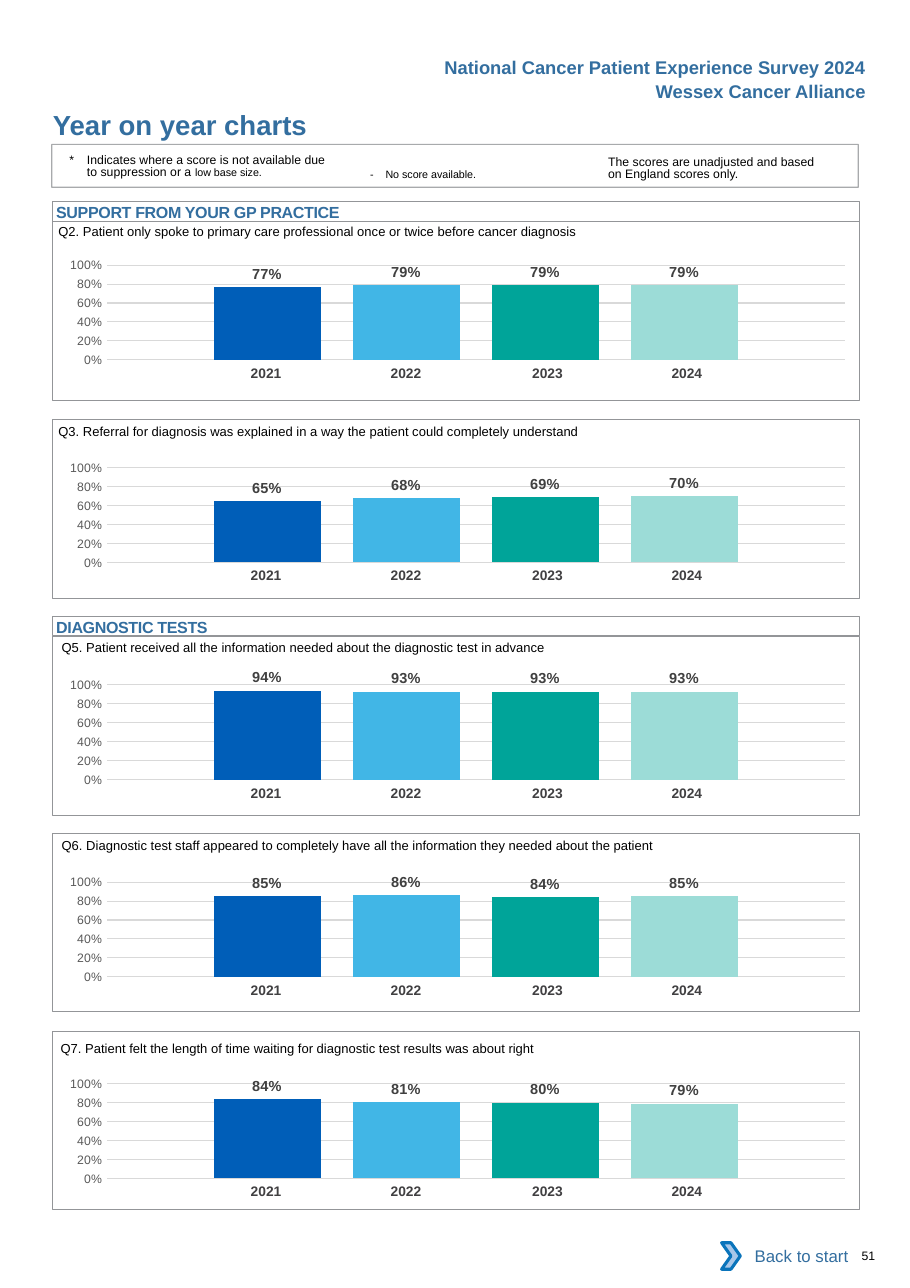
from lxml.etree import SubElement
from pptx import Presentation
from pptx.chart.data import CategoryChartData
from pptx.dml.color import RGBColor
from pptx.enum.chart import XL_CHART_TYPE as CHART, XL_LABEL_POSITION as POS, XL_TICK_MARK as TICK
from pptx.enum.shapes import MSO_SHAPE as SHAPE
from pptx.enum.text import MSO_ANCHOR as ANCHOR, PP_ALIGN as ALIGN
from pptx.oxml import parse_xml
from pptx.oxml.ns import nsdecls, qn
from pptx.util import Inches, Pt

rgb = RGBColor.from_string
BLUE, GREY = "336E9F", "939598"
BAR_COLORS = ["005EB8", "41B6E6", "00A499", "9CDCD7"]
YEARS = ["2021", "2022", "2023", "2024"]
LEFT, WIDTH = 0.48, 7.32

prs = Presentation()
prs.slide_width, prs.slide_height = Inches(8.26), Inches(11.69)
s = prs.slides.add_slide(prs.slide_layouts[6])


def write(sp, text, size, color="000000", bold=False, align=ALIGN.LEFT,
          anchor=ANCHOR.TOP, inset=(0, 0, 0, 0)):
    tf = sp.text_frame
    tf.word_wrap, tf.vertical_anchor = True, anchor
    tf.margin_left, tf.margin_top, tf.margin_right, tf.margin_bottom = map(Inches, inset)
    p = tf.paragraphs[0]
    p.text, p.alignment = text, align
    p.font.name, p.font.size, p.font.bold = "Arial", Pt(size), bold
    p.font.color.rgb = rgb(color)
    return p


def add_shape(kind, left, top, width, height, fill=None, line=None, weight=0.5):
    sp = s.shapes.add_shape(kind, *map(Inches, (left, top, width, height)))
    sp.shadow.inherit = False
    if fill:
        sp.fill.solid()
        sp.fill.fore_color.rgb = rgb(fill)
    else:
        sp.fill.background()
    if line:
        sp.line.color.rgb = rgb(line)
        sp.line.width = Pt(weight)
    else:
        sp.line.fill.background()
    return sp


# Header and page title
for top, text in [(0.46, "National Cancer Patient Experience Survey 2024"),
                  (0.68, "Wessex Cancer Alliance")]:
    tb = s.shapes.add_textbox(Inches(3.36), Inches(top), Inches(4.5), Inches(0.3))
    write(tb, text, 12, BLUE, True, ALIGN.RIGHT, inset=(0, 0.05, 0, 0))
tb = s.shapes.add_textbox(Inches(LEFT), Inches(0.98), Inches(4.5), Inches(0.3))
write(tb, "Year on year charts", 18, BLUE, True)

# Notes box: text, left, top, width, hanging indent, size
frame = add_shape(SHAPE.RECTANGLE, 0.47, 1.31, WIDTH, 0.39, line=GREY, weight=0.75)
SubElement(frame.line.fill.fore_color._xFill.find(qn("a:srgbClr")), qn("a:alpha"), val="80000")
notes = [
    ("*\tIndicates where a score is not available due to suppression or a ",
     0.63, 1.4, 2.4, 0.16, 8),
    ("-\tNo score available.", 3.36, 1.53, 1.5, 0.14, 7),
    ("The scores are unadjusted and based on England scores only.",
     5.52, 1.42, 1.95, 0, 8),
]
for text, left, top, width, indent, size in notes:
    tb = s.shapes.add_textbox(*map(Inches, (left, top, width, 0.24)))
    p = write(tb, text, size)
    p.line_spacing = Pt(8.1)
    pPr = p._p.get_or_add_pPr()
    pPr.set("marL", str(Inches(indent)))
    pPr.set("indent", str(-Inches(indent)))
    if text.startswith("*"):
        r = p.add_run()
        r.text, r.font.size = "low base size.", Pt(7)

# Section headings
for top, text in [(1.83, "SUPPORT FROM YOUR GP PRACTICE"), (5.59, "DIAGNOSTIC TESTS")]:
    sp = add_shape(SHAPE.RECTANGLE, LEFT, top, WIDTH, 0.18, line=GREY)
    p = write(sp, text, 10.5, BLUE, True, inset=(0.03, 0.01, 0, 0))
    p.runs[0]._r.get_or_add_rPr().set("spc", "-20")

# Question panels: question, text left, text top, panel top, chart top, scores
panels = [
    ("Q2. Patient only spoke to primary care professional once or twice before cancer diagnosis",
     0.53, 2.03, 2.01, 2.22, (0.77, 0.79, 0.79, 0.79)),
    ("Q3. Referral for diagnosis was explained in a way the patient could completely understand",
     0.53, 3.84, 3.81, 4.06, (0.65, 0.68, 0.69, 0.7)),
    ("Q5. Patient received all the information needed about the diagnostic test in advance",
     0.56, 5.8, 5.78, 6.03, (0.94, 0.93, 0.93, 0.93)),
    ("Q6. Diagnostic test staff appeared to completely have all the information they needed "
     "about the patient",
     0.56, 7.6, 7.56, 7.82, (0.85, 0.86, 0.84, 0.85)),
    ("Q7. Patient felt the length of time waiting for diagnostic test results was about right",
     0.55, 9.44, 9.36, 9.65, (0.84, 0.81, 0.8, 0.79)),
]
for question, left, text_top, panel_top, chart_top, scores in panels:
    tb = s.shapes.add_textbox(*map(Inches, (left, text_top, 7.2, 0.15)))
    write(tb, question, 8.5)

    # Year labels
    table = s.shapes.add_table(1, 4, *map(Inches, (1.73, chart_top + 1.05, 5.15, 0.27))).table
    table.first_row = table.horz_banding = False
    table._tbl.tblPr.find(qn("a:tableStyleId")).text = "{2D5ABB26-0587-4C30-8999-92F81FD0307C}"
    table.rows[0].height = Inches(0.27)
    for i, (year, width, right) in enumerate(zip(YEARS, (1.27, 1.27, 1.34, 1.27),
                                                 (0, 0, 0.04, 0.12))):
        table.columns[i].width = Inches(width)
        cell = table.cell(0, i)
        cell.fill.background()
        cell.margin_left, cell.margin_right = Inches(0.1), Inches(right)
        p = cell.text_frame.paragraphs[0]
        p.text, p.alignment = year, ALIGN.CENTER
        p.font.name, p.font.size, p.font.bold = "Arial", Pt(9), True
        p.font.color.rgb = rgb("414042")

    # Column chart
    data = CategoryChartData(number_format="0%")
    data.categories = ["1"]
    for i, score in enumerate(scores, 1):
        data.add_series(f"Series {i}", [score])
    chart = s.shapes.add_chart(CHART.COLUMN_CLUSTERED,
                               *map(Inches, (0.39, chart_top, WIDTH, 1.29)), data).chart
    chart.has_legend = chart.has_title = False
    chart.font.name, chart.font.size = "Calibri", Pt(10)
    chart.font.color.rgb = rgb("000000")
    chart.category_axis.visible = False
    axis = chart.value_axis
    axis.minimum_scale, axis.maximum_scale, axis.major_unit = 0, 1, 0.2
    axis.major_tick_mark = axis.minor_tick_mark = TICK.NONE
    axis.format.line.fill.background()
    axis.major_gridlines.format.line.color.rgb = rgb("D9D9D9")
    axis.major_gridlines.format.line.width = Pt(0.75)
    labels = axis.tick_labels
    labels.number_format, labels.number_format_is_linked = "0%", False
    labels.font.name, labels.font.size = "Arial", Pt(8)
    labels.font.color.rgb = rgb("595959")
    plot = chart.plots[0]
    plot.gap_width, plot.overlap, plot.vary_by_categories = 200, -30, False
    for series, color in zip(plot.series, BAR_COLORS):
        series.format.fill.solid()
        series.format.fill.fore_color.rgb = rgb(color)
        labels = series.data_labels
        labels.show_value, labels.position = True, POS.OUTSIDE_END
        labels.number_format, labels.number_format_is_linked = "0%", False
        labels.font.name, labels.font.size, labels.font.bold = "Arial", Pt(9.5), True
        labels.font.color.rgb = rgb("404040")

    # Fixed plot area
    area = chart._chartSpace.chart.plotArea
    for old in area.findall(qn("c:layout")):
        area.remove(old)
    area.insert(0, parse_xml(
        f'<c:layout {nsdecls("c")}><c:manualLayout><c:layoutTarget val="inner"/>'
        '<c:xMode val="edge"/><c:yMode val="edge"/><c:x val="0.079"/><c:y val="0.145"/>'
        '<c:w val="0.915"/><c:h val="0.666"/></c:manualLayout></c:layout>'))

    add_shape(SHAPE.RECTANGLE, LEFT, panel_top, WIDTH, 1.62, line=GREY)

# Footer
sp = add_shape(SHAPE.RECTANGLE, 6.62, 11.19, 1.18, 0.42, fill="FFFFFF")
write(sp, "Back to start", 11, BLUE, align=ALIGN.RIGHT, anchor=ANCHOR.MIDDLE,
      inset=(0.1, 0.05, 0.1, 0.05))
add_shape(SHAPE.CHEVRON, 6.55, 11.28, 0.17, 0.24, fill="A8C7E9", line="0A74BB", weight=2)
tb = s.shapes.add_textbox(*map(Inches, (7.82, 11.33, 0.4, 0.13)))
write(tb, "51", 8)

prs.save("out.pptx")
